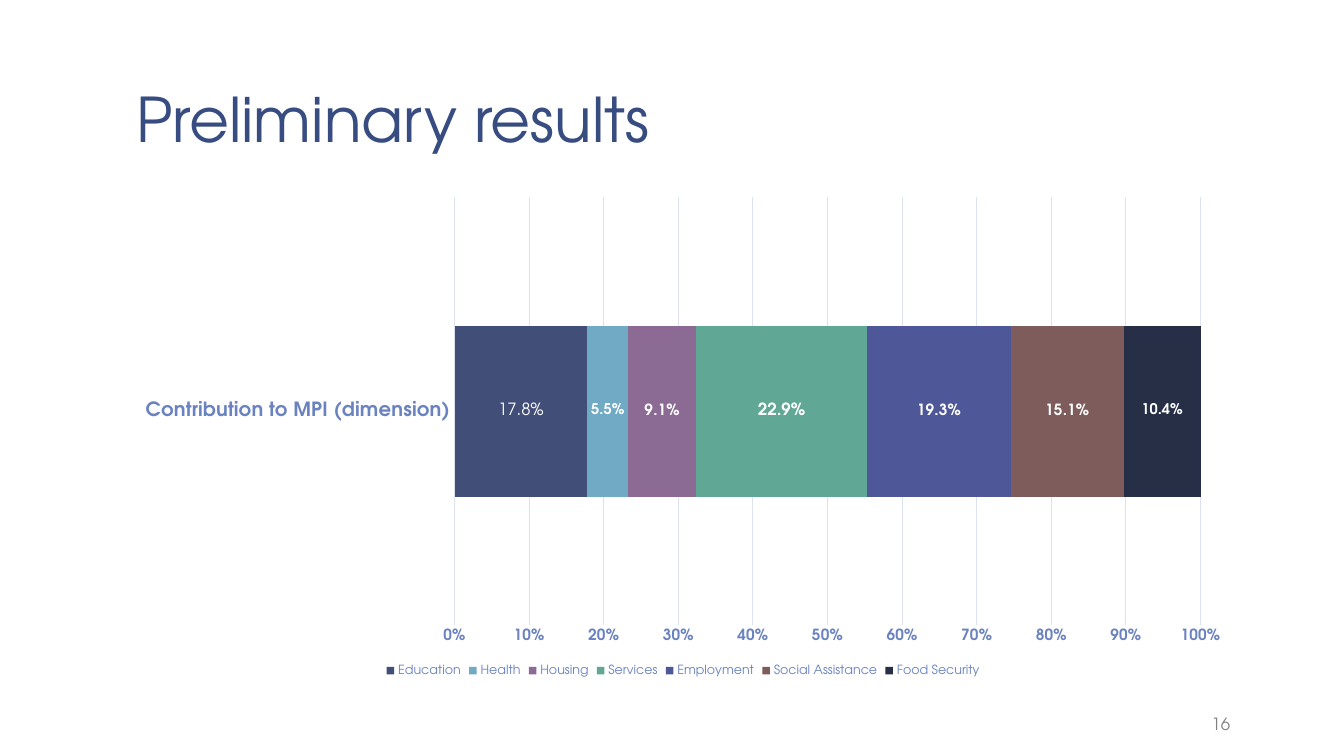
from pptx import Presentation
from pptx.chart.data import CategoryChartData
from pptx.dml.color import RGBColor
from pptx.enum.chart import XL_CHART_TYPE, XL_LABEL_POSITION, XL_LEGEND_POSITION, XL_TICK_MARK
from pptx.enum.text import MSO_ANCHOR, PP_ALIGN
from pptx.oxml import parse_xml
from pptx.oxml.ns import nsdecls, qn
from pptx.util import Inches, Pt

BAR_STACKED = XL_CHART_TYPE.BAR_STACKED
CENTER = XL_LABEL_POSITION.CENTER
LEGEND_BOTTOM = XL_LEGEND_POSITION.BOTTOM
NO_TICK = XL_TICK_MARK.NONE
BOTTOM = MSO_ANCHOR.BOTTOM
LEFT, RIGHT = PP_ALIGN.LEFT, PP_ALIGN.RIGHT

# Content
FONT = "TeX Gyre Adventor"
TITLE = "Preliminary results"
PAGE_NUMBER = "16"
CATEGORY = "Contribution to MPI (dimension)"
DIMENSIONS = [  # name, share, fill, label size, label bold
    ("Education", 0.178, "414E77", 12, False),
    ("Health", 0.055, "70AAC4", 10.5, True),
    ("Housing", 0.091, "8B6A94", 11, True),
    ("Services", 0.229, "61A796", 12, True),
    ("Employment", 0.193, "4E5798", 11, True),
    ("Social Assistance", 0.151, "7E5C5C", 11, True),
    ("Food Security", 0.104, "272F47", 10.5, True),
]
NAVY, BLUE, PALE, GRAY, WHITE = "374C81", "6A83C0", "DDE2F0", "808080", "FFFFFF"

# Layout in inches; plot area as shares of the chart
SLIDE_W, SLIDE_H = 13.33, 7.5
MARGIN, CONTENT_W = 1.22, 11.11
NUMBER_W = 1.21
PLOT_SHARES = {"x": 0.296, "y": 0.02, "w": 0.666, "h": 0.868}


def rgb(value):
    return RGBColor.from_string(value)


def style(font, size, color, bold=False):
    for key, value in {"name": FONT, "size": Pt(size), "bold": bold}.items():
        setattr(font, key, value)
    font.color.rgb = rgb(color)


def rule(line):
    line.color.rgb = rgb(PALE)
    line.width = Pt(0.75)


def add_text(slide, words, box, size, color, align, spacing=1.0):
    frame = slide.shapes.add_textbox(*map(Inches, box)).text_frame
    settings = {
        "word_wrap": True, "vertical_anchor": BOTTOM,
        "margin_left": Inches(0.13), "margin_right": Inches(0.13),
        "margin_top": Inches(0.07), "margin_bottom": Inches(0.07),
    }
    for key, value in settings.items():
        setattr(frame, key, value)
    paragraph = frame.paragraphs[0]
    paragraph.alignment = align
    paragraph.line_spacing = spacing
    run = paragraph.add_run()
    run.text = words
    style(run.font, size, color)


def place_plot(chart):
    plot_area = chart.plots[0]._element.getparent()
    for old in plot_area.findall(qn("c:layout")):
        plot_area.remove(old)
    modes = "".join(f'<c:{side}Mode val="edge"/>' for side in "xy")
    shares = "".join(f'<c:{side} val="{share}"/>' for side, share in PLOT_SHARES.items())
    plot_area.insert(0, parse_xml(
        f'<c:layout {nsdecls("c")}><c:manualLayout><c:layoutTarget val="inner"/>'
        f"{modes}{shares}</c:manualLayout></c:layout>"))


def add_contribution_chart(slide, box):
    data = CategoryChartData(number_format="0.0%")
    data.categories = [CATEGORY]
    for name, share, *_ in DIMENSIONS:
        data.add_series(name, [share])
    chart = slide.shapes.add_chart(BAR_STACKED, *map(Inches, box), data).chart
    chart.has_title = False
    style(chart.font, 10, NAVY)
    place_plot(chart)

    # Bar segments and their labels
    bar = chart.plots[0]
    bar.gap_width, bar.overlap, bar.vary_by_categories = 150, 100, False
    for series, (_, _, fill, size, bold) in zip(bar.series, DIMENSIONS):
        series.format.fill.solid()
        series.format.fill.fore_color.rgb = rgb(fill)
        labels = series.data_labels
        for key, value in {"show_value": True, "position": CENTER, "number_format": "0.0%",
                           "number_format_is_linked": False}.items():
            setattr(labels, key, value)
        style(labels.font, size, WHITE, bold)

    # Axes
    for axis, size in ((chart.category_axis, 14), (chart.value_axis, 11)):
        axis.major_tick_mark = axis.minor_tick_mark = NO_TICK
        style(axis.tick_labels.font, size, BLUE, True)
    rule(chart.category_axis.format.line)
    shares = chart.value_axis
    shares.minimum_scale, shares.maximum_scale, shares.major_unit = 0, 1, 0.1
    shares.tick_labels.number_format = "0%"
    shares.tick_labels.number_format_is_linked = False
    shares.format.line.fill.background()
    shares.has_major_gridlines = True
    rule(shares.major_gridlines.format.line)

    # Legend
    chart.has_legend = True
    chart.legend.position = LEGEND_BOTTOM
    chart.legend.include_in_layout = False
    style(chart.legend.font, 9, BLUE)


def main():
    deck = Presentation()
    deck.slide_width, deck.slide_height = Inches(SLIDE_W), Inches(SLIDE_H)
    slide = deck.slides.add_slide(deck.slide_layouts[6])
    slide.background.fill.solid()
    slide.background.fill.fore_color.rgb = rgb(WHITE)

    add_text(slide, TITLE, (MARGIN, 0.08, CONTENT_W, 1.53), 44, NAVY, LEFT, 0.85)
    number_left = MARGIN + CONTENT_W - NUMBER_W
    add_text(slide, PAGE_NUMBER, (number_left, 7, NUMBER_W, 0.35), 12, GRAY, RIGHT)
    add_contribution_chart(slide, (MARGIN, 1.86, CONTENT_W, 4.89))
    deck.save("out.pptx")


if __name__ == "__main__":
    main()
